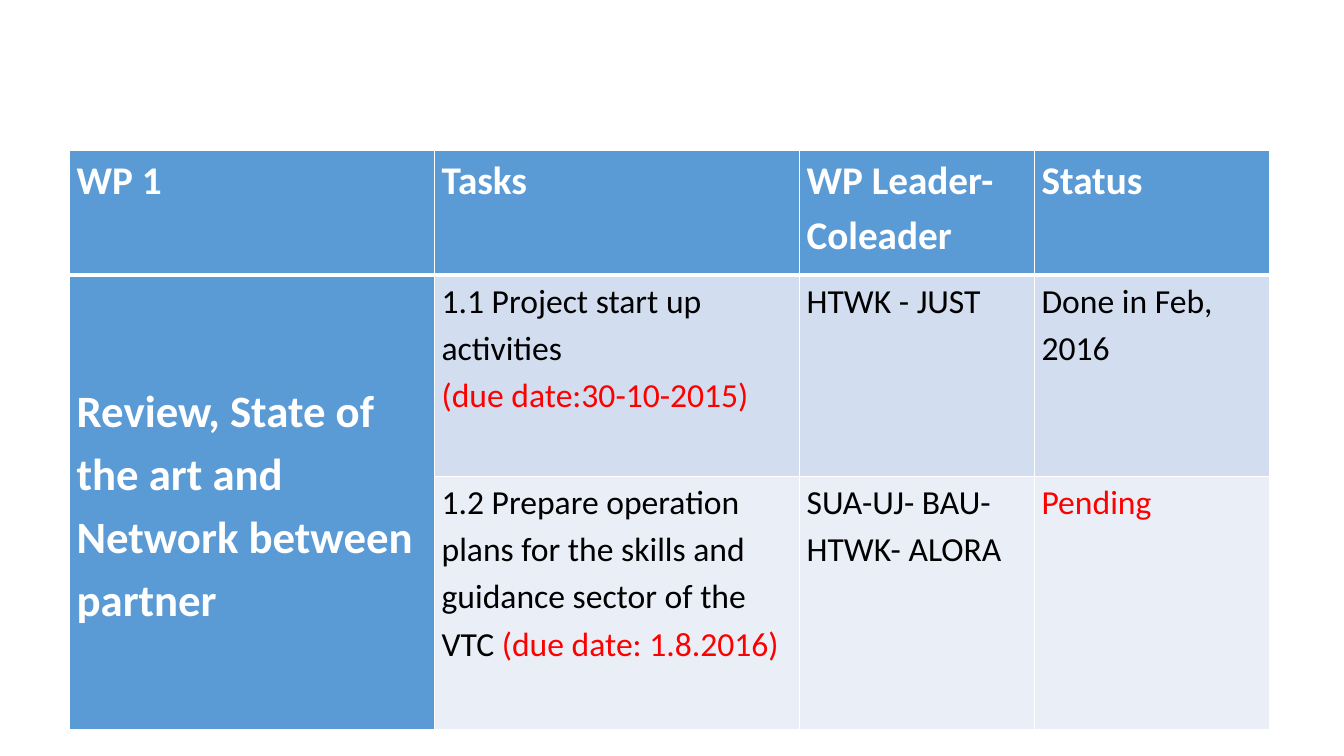
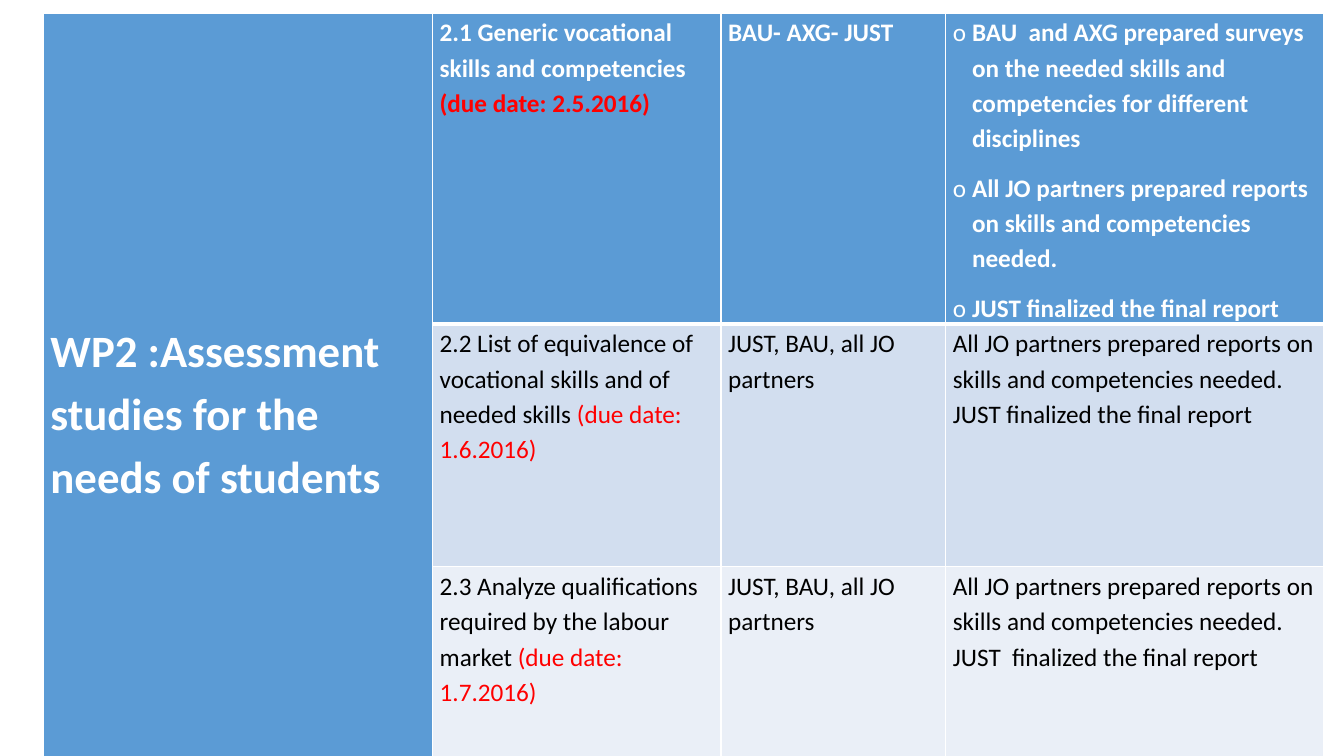
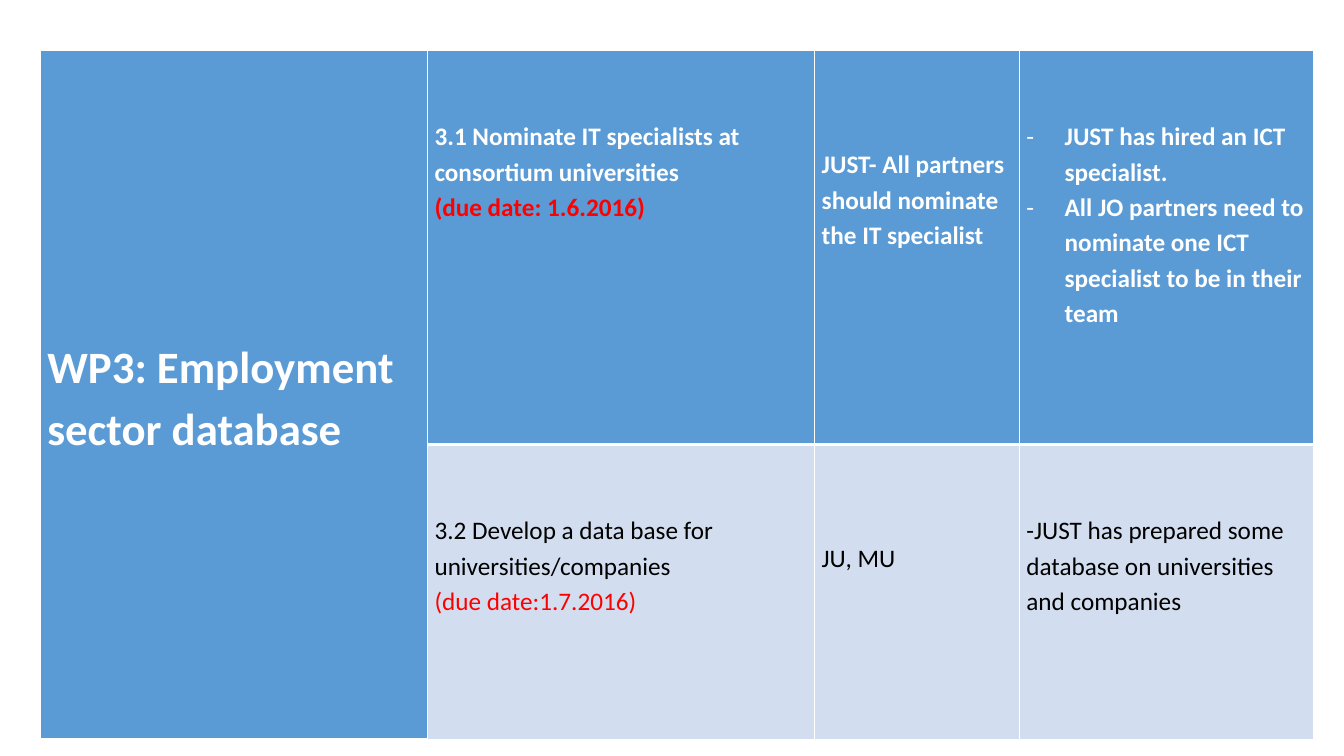
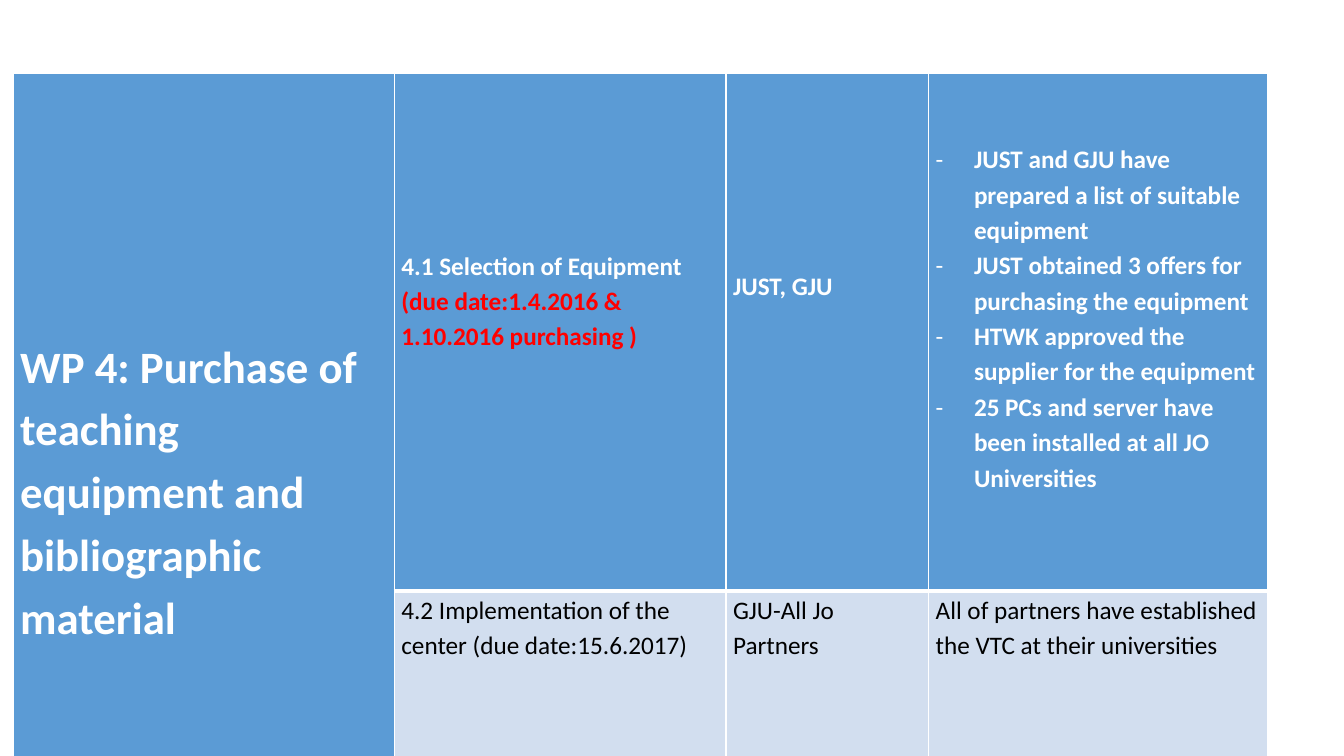
from dataclasses import dataclass

from lxml.etree import SubElement
from pptx import Presentation
from pptx.dml.color import RGBColor
from pptx.enum.text import MSO_ANCHOR
from pptx.oxml.ns import qn
from pptx.util import Emu, Inches, Pt


def color(value):
    """Turn a hex string into a colour."""
    return RGBColor.from_string(value)


def apply(target, values):
    """Set the attributes named in a dict."""
    for name, value in values.items():
        setattr(target, name, value)


@dataclass
class Entry:
    """Cell text; a bar in a line switches to the due-date colour."""

    lines: list
    lead: int = 0
    after: int = 0
    bullet: str = ""
    indent: float = 0


class Deck:
    """Holds the style and the current slide."""

    FONT = "Calibri"
    WHITE, BLACK, RED = "FFFFFF", "000000", "FF0000"
    HEADER, BANDS = "5B9BD5", ("D2DEEF", "EAEFF7")
    PACKAGE_SIZE = 32
    LINE_SPACING = 1.15
    LEAD_HEIGHT, LEAD_TRIM = 25.3, 3
    MARGINS = {"margin_left": Inches(0.07), "margin_right": Inches(0.07), "margin_bottom": 0}

    def __init__(self):
        """Start an empty widescreen presentation."""
        self.presentation = Presentation()
        apply(self.presentation, {"slide_width": Inches(13.33), "slide_height": Inches(7.5)})
        self.slide = None

    def across(self, share):
        """Return a percentage of the slide width."""
        return Emu(round(self.presentation.slide_width * share / 100))

    def down(self, share):
        """Return a percentage of the slide height."""
        return Emu(round(self.presentation.slide_height * share / 100))

    def add_slide(self):
        """Add a blank slide and make it current."""
        self.slide = self.presentation.slides.add_slide(self.presentation.slide_layouts[6])

    def add_borders(self, cell, bottom_width):
        """Draw white borders around a cell."""
        properties = cell._tc.get_or_add_tcPr()
        for side, width in (("L", 1), ("R", 1), ("T", 1), ("B", bottom_width)):
            line = SubElement(properties, qn(f"a:ln{side}"), w=str(Pt(width)))
            fill = SubElement(line, qn("a:solidFill"))
            SubElement(fill, qn("a:srgbClr"), val=self.WHITE)

    def add_bullet(self, paragraph, entry):
        """Give a paragraph a hanging bullet."""
        properties = paragraph._p.get_or_add_pPr()
        hang = Inches(entry.indent)
        properties.set("marL", str(hang))
        properties.set("indent", str(-hang))
        SubElement(properties, qn("a:buFont"), typeface=self.FONT)
        SubElement(properties, qn("a:buChar"), char=entry.bullet)

    def add_text(self, cell, entry, size, text_color, bold):
        """Put the lines of an entry into a cell."""
        frame = cell.text_frame
        for index, text in enumerate(entry.lines):
            paragraph = frame.add_paragraph() if index else frame.paragraphs[0]
            apply(paragraph, {"line_spacing": self.LINE_SPACING, "space_after": Pt(entry.after)})
            if entry.bullet:
                self.add_bullet(paragraph, entry)
            for part, run_color in zip(text.split("|"), (text_color, self.RED)):
                if part:
                    run = paragraph.add_run()
                    run.text = part
                    apply(run.font, {"name": self.FONT, "size": Pt(size), "bold": bold})
                    run.font.color.rgb = color(run_color)

    def format_cell(self, cell, row, is_header):
        """Set the margins, borders and fill of a cell."""
        apply(cell, self.MARGINS)
        self.add_borders(cell, 1 if row else 3)
        cell.fill.solid()
        cell.fill.fore_color.rgb = color(self.HEADER if is_header else self.BANDS[(row - 1) % 2])

    def add_work_package(self, corner, widths, heights, package, rows, size=18, headings=()):
        """Add a slide with the table of one work package."""
        self.add_slide()
        left, top = corner
        table = self.slide.shapes.add_table(
            len(heights), len(widths), self.across(left), self.down(top),
            self.across(sum(widths)), self.down(sum(heights))).table
        for column, width in zip(table.columns, widths):
            column.width = self.across(width)
        for table_row, height in zip(table.rows, heights):
            table_row.height = self.down(height)

        first = 1 if headings else 0
        entries = [[Entry([package] if index == 0 else []), *row] for index, row in enumerate(rows)]
        if headings:
            entries.insert(0, [Entry([heading]) for heading in headings])
        for row, row_entries in enumerate(entries):
            for column, entry in enumerate(row_entries):
                cell = table.cell(row, column)
                is_header = row == 0 or column == 0
                self.format_cell(cell, row, is_header)
                lead = entry.lead * (self.LEAD_HEIGHT + entry.after) - self.LEAD_TRIM
                cell.margin_top = Pt(lead) if entry.lead else 0
                text_size = 28 if row < first else size if column else self.PACKAGE_SIZE
                self.add_text(cell, entry, text_size, self.WHITE if is_header else self.BLACK, is_header)
        package_cell = table.cell(first, 0)
        package_cell.vertical_anchor = MSO_ANCHOR.MIDDLE
        package_cell.merge(table.cell(len(entries) - 1, 0))


def main():
    """Build the four work package slides."""
    deck = Deck()
    deck.add_work_package(
        (5.18, 19.87), (27.16, 27.16, 17.48, 17.48), (16.53, 26.67, 33.47),
        "Review, State of the art and Network between partner",
        [[Entry(["1.1 Project start up activities", "|(due date:30-10-2015)"]),
          Entry(["HTWK - JUST"]),
          Entry(["Done in Feb, 2016"])],
         [Entry(["1.2 Prepare operation plans for the skills and guidance sector of the VTC "
                 "|(due date: 1.8.2016)"]),
          Entry(["SUA-UJ- BAU- HTWK- ALORA"]),
          Entry(["|Pending"])]],
        size=24, headings=("WP 1", "Tasks", "WP Leader-Coleader", "Status"))

    deck.add_work_package(
        (3.23, 1.73), (28.96, 21.46, 16.73, 28.13), (32.13,) * 3,
        "WP2 :Assessment studies for the needs of students",
        [[Entry(["2.1 Generic vocational skills and competencies |(due date: 2.5.2016)"]),
          Entry(["BAU- AXG- JUST"]),
          Entry(["BAU  and AXG prepared surveys on the needed skills and competencies "
                 "for different disciplines",
                 "All JO partners prepared reports on skills and competencies needed.",
                 "JUST finalized the final report"], after=10, bullet="o", indent=0.19)],
         [Entry(["2.2 List of equivalence of vocational skills and of needed skills "
                 "|(due date: 1.6.2016)"]),
          Entry(["JUST, BAU, all JO partners"]),
          Entry(["All JO partners prepared reports on skills and competencies needed. "
                 "JUST finalized the final report"])],
         [Entry(["2.3 Analyze qualifications required by the labour market |(due date: 1.7.2016)"]),
          Entry(["JUST, BAU, all JO partners"]),
          Entry(["All JO partners prepared reports on skills and competencies needed. "
                 "JUST  finalized the final report"])]])

    deck.add_work_package(
        (3, 6.67), (28.81, 28.81, 15.23, 21.91), (52.13, 39.07),
        "WP3: Employment sector database",
        [[Entry(["3.1 Nominate IT specialists at consortium universities",
                 "|(due date: 1.6.2016)"], lead=2),
          Entry(["JUST- All partners should nominate the IT specialist"], lead=2, after=10),
          Entry(["JUST has hired an ICT specialist.",
                 "All JO partners need to nominate one ICT specialist to be in their team"],
                lead=2, bullet="-", indent=0.38)],
         [Entry(["3.2 Develop a data base for universities/companies",
                 "|(due date:1.7.2016)"], lead=2),
          Entry(["JU, MU"], lead=2, after=10),
          Entry(["-JUST has prepared some database on universities and companies"], lead=2)]])

    deck.add_work_package(
        (0.98, 9.73), (28.36, 24.68, 15.08, 25.21), (68.4, 17.2),
        "WP 4: Purchase of teaching equipment and bibliographic material",
        [[Entry(["4.1 Selection of Equipment |(due date:1.4.2016 &",
                 "|1.10.2016 purchasing )"], lead=5),
          Entry(["JUST, GJU"], lead=4, after=10),
          Entry(["JUST and GJU have prepared a list of suitable equipment",
                 "JUST obtained 3 offers for purchasing the equipment",
                 "HTWK approved the supplier for the equipment",
                 "25 PCs and server have been installed at all JO Universities"],
                lead=2, bullet="-", indent=0.38)],
         [Entry(["4.2 Implementation of the center (due date:15.6.2017)"]),
          Entry(["GJU-All Jo Partners"]),
          Entry(["All of partners have established the VTC at their universities"])]])
    deck.presentation.save("out.pptx")


if __name__ == "__main__":
    main()
